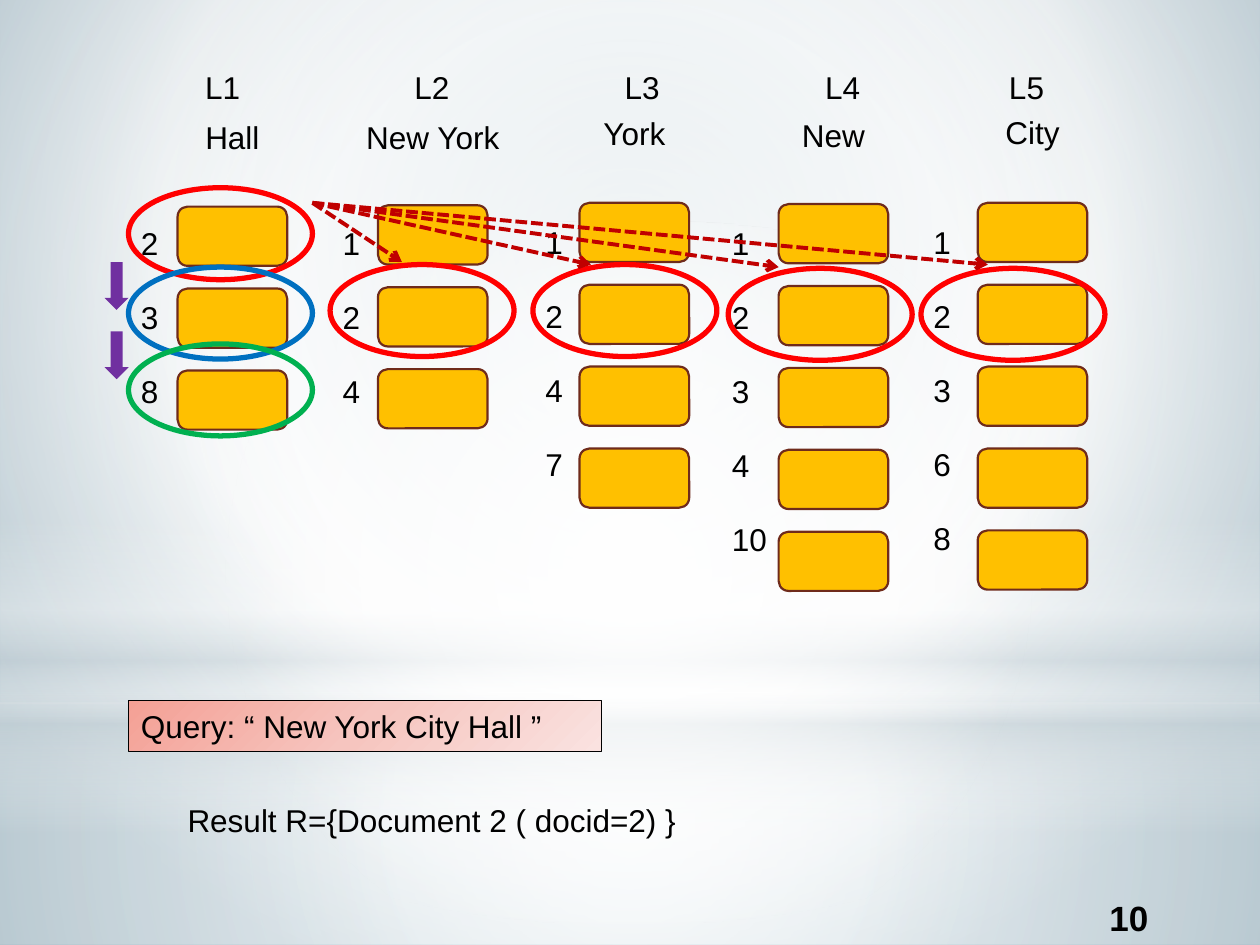
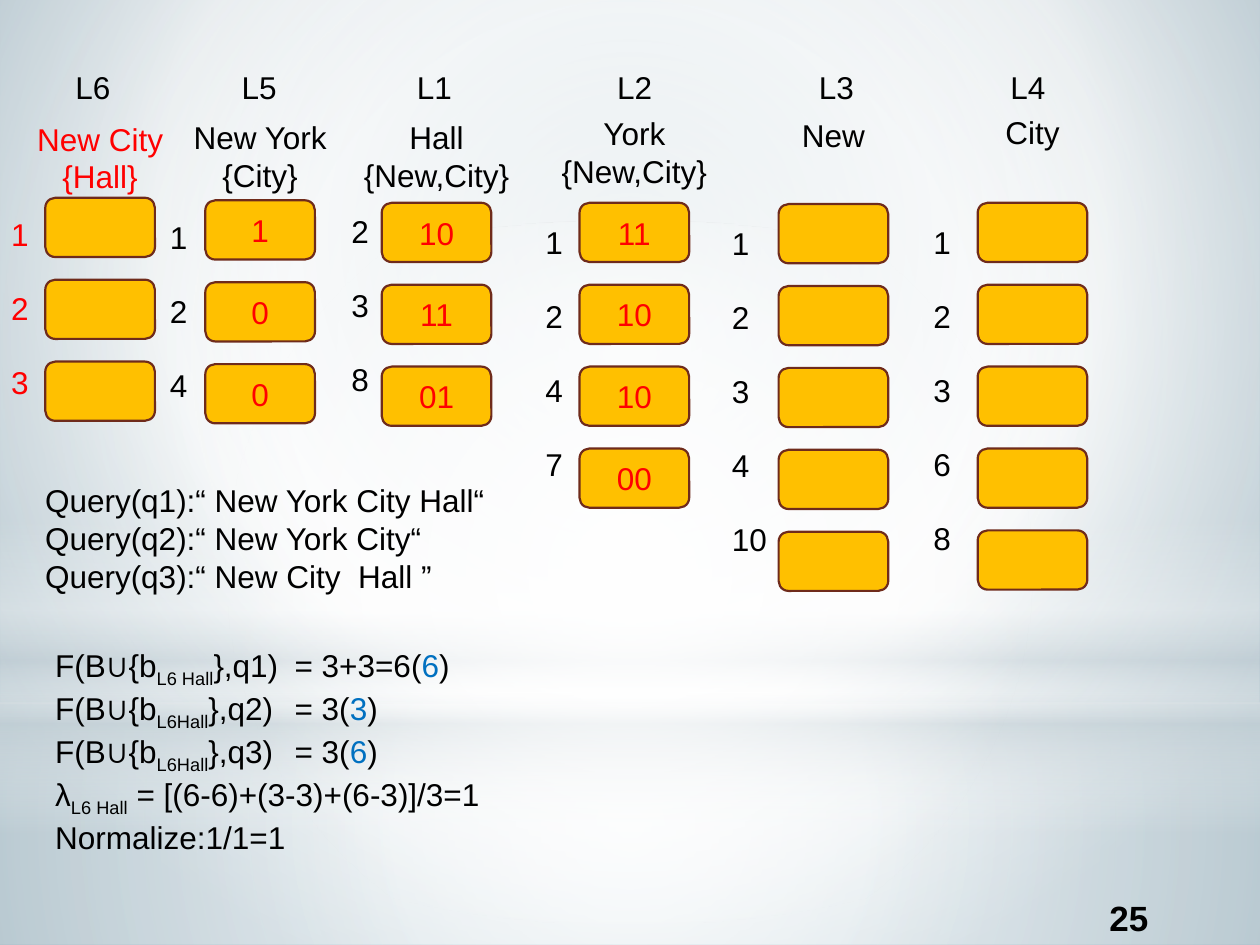
from collections import namedtuple
from lxml import etree
from pptx import Presentation, util as u
from pptx.dml.color import RGBColor
from pptx.enum import dml, shapes, text as t
from pptx.oxml.ns import qn

COLORS = {
    "black": "000000", "white": "FFFFFF", "red": "FF0000", "blue": "0070C0",
    "green": "00B050", "purple": "7030A0", "amber": "FFC000", "brown": "6F2B1B",
    "dark red": "C00000", "mist": "C5D1D7", "sky": "B8CAD3", "steel": "8FAEBD",
    "coral": "F4A095", "rose": "F6C5BF", "blush": "FAE2E0",
}
FONT = "Arial"
KINDS = shapes.MSO_SHAPE

presentation = Presentation()
presentation.slide_width, presentation.slide_height = u.Inches(10), u.Inches(7.5)
# The slide is a grid of 100 columns by 75 rows of square cells
CELL = presentation.slide_width // 100


def draw(slide, cells, text=(), kind=None, fill=None, line=None, weight=1.25,
         color="black", size=18, bold=False, align="LEFT", anchor="TOP",
         gap=0, tab=None):
    """Draw a shape, or a text box if kind is None. Each item of text is a
    paragraph: a string, or a list of (words, style) runs."""
    place = [round(cell * CELL) for cell in cells]
    if kind is None:
        shape = slide.shapes.add_textbox(*place)
    else:
        shape = slide.shapes.add_shape(kind, *place)
        shape.shadow.inherit = False
        if fill:
            shape.fill.solid()
            shape.fill.fore_color.rgb = RGBColor.from_string(COLORS[fill])
        else:
            shape.fill.background()
        if line:
            shape.line.color.rgb = RGBColor.from_string(COLORS[line])
            shape.line.width = u.Pt(weight)
        else:
            shape.line.fill.background()
    frame = shape.text_frame
    frame.word_wrap = True
    frame.vertical_anchor = getattr(t.MSO_ANCHOR, anchor)
    for index, words in enumerate(text):
        paragraph = frame.add_paragraph() if index else frame.paragraphs[0]
        paragraph.alignment = getattr(t.PP_ALIGN, align)
        paragraph.space_before = u.Pt(gap if index else 0)
        if tab:
            stops = etree.SubElement(paragraph._p.get_or_add_pPr(), qn("a:tabLst"))
            etree.SubElement(stops, qn("a:tab"), pos=str(round(tab * CELL)), algn="l")
        for part, style in [(words, "")] if isinstance(words, str) else words:
            run = paragraph.add_run()
            run.text = part
            run.font.name, run.font.size, run.font.bold = FONT, u.Pt(size), bold
            ink = style if style in COLORS else color
            run.font.color.rgb = RGBColor.from_string(COLORS[ink])
            if style == "subscript":
                run._r.get_or_add_rPr().set("baseline", "-25000")
    return shape


def gradient(owner, fill, stops, focus=None, angle=0):
    """Give a fill its (position, color, opacity) stops, around a focus
    rectangle or along an angle."""
    fill.gradient()
    node = next(owner.element.iter(qn("a:gradFill")))
    for child in list(node):
        node.remove(child)
    stop_list = etree.SubElement(node, qn("a:gsLst"))
    for position, color, opacity in stops:
        stop = etree.SubElement(stop_list, qn("a:gs"), pos=str(position * 1000))
        paint = etree.SubElement(stop, qn("a:srgbClr"), val=COLORS[color])
        etree.SubElement(paint, qn("a:alpha"), val=str(opacity * 1000))
    if focus:
        path = etree.SubElement(node, qn("a:path"), path="circle")
        sides = {side: str(share * 1000) for side, share in zip("ltrb", focus)}
        etree.SubElement(path, qn("a:fillToRect"), **sides)
    else:
        etree.SubElement(node, qn("a:lin"), ang=str(angle * 60000), scaled="0")


# Shared backdrop
CENTER = (50, 50, 50, 50)
BACKGROUND = [(0, "sky", 100), (60, "white", 100), (100, "steel", 100)]
BANDS = [
    (KINDS.RECTANGLE, (0, 55.8, 100, 19.2), CENTER,
     [(0, "white", 91), (37, "white", 76), (100, "mist", 79)]),
    (KINDS.RECTANGLE, (0, 0, 100, 55.8), CENTER,
     [(0, "white", 89), (48, "white", 62), (100, "mist", 79)]),
    (KINDS.RECTANGLE, (0, 41.2, 100, 25), None,
     [(0, "white", 0), (29, "white", 30), (45, "mist", 40), (55, "white", 26),
      (65, "mist", 60), (100, "white", 0)]),
    (KINDS.OVAL, (0, 17.5, 100, 55.8), CENTER,
     [(0, "white", 100), (56, "white", 0)]),
]

# Posting lists: a heading, document numbers and one box per document
BOX_WIDTH, BOX_HEIGHT, BOX_PITCH = 8.7, 4.7, 6.5
NAME_WIDTH = 15
Posting = namedtuple(
    "Posting", "label label_left name name_top box_left box_top "
    "numbers number_left number_top values color", defaults=((), "black"))
york = Posting("L3", 48.6, ["York"], 8.6, 46, 16.1, "1 2 4 7", 42.3, 17.2)
new = Posting("L4", 64.5, ["New"], 8.7, 61.8, 16.2, "1 2 3 4 10", 57.1, 17.3)
city = Posting("L5", 79.1, ["City"], 8.5, 77.6, 16.1, "1 2 3 6 8", 73.1, 17.2)
SLIDES = [
    ("10", [
        Posting("L1", 15.3, ["Hall"], 8.9, 14.1, 16.4, "2 3 8", 10.2, 17.3),
        Posting("L2", 31.9, ["New York"], 8.9, 30, 16.3, "1 2 4", 26.2, 17.3),
        york, new, city]),
    ("25", [
        Posting("L6", 5, ["New City", "{Hall}"], 9, 3.6, 15.7, "1 2 3", -0.1, 16.6,
                color="red"),
        Posting("L5", 18.2, ["New York", "{City}"], 8.9, 16.3, 15.9, "1 2 4",
                12.5, 16.8, ["1", "0", "0"]),
        Posting("L1", 32.1, ["Hall", "{New,City}"], 8.9, 30.3, 16.1, "2 3 8",
                26.9, 16.3, ["10", "11", "01"]),
        york._replace(label="L2", label_left=48, name=["York", "{New,City}"],
                      values=["11", "10", "10", "00"]),
        new._replace(label="L3", label_left=64),
        city._replace(label="L4", label_left=79.2)]),
]

for page, postings in SLIDES:
    slide = presentation.slides.add_slide(presentation.slide_layouts[6])
    gradient(slide, slide.background.fill, BACKGROUND, focus=(20, 10, 20, 60))
    for kind, cells, focus, stops in BANDS:
        band = draw(slide, cells, kind=kind)
        gradient(band, band.fill, stops, focus, angle=90)
    draw(slide, (79.6, 70.8, 20, 4), [page], size=20, bold=True,
         align="CENTER", anchor="MIDDLE")

    for posting in postings:
        numbers = posting.numbers.split()
        draw(slide, (posting.label_left, 4.9, 6, 4), [posting.label])
        name_left = posting.box_left + (BOX_WIDTH - NAME_WIDTH) / 2
        draw(slide, (name_left, posting.name_top, NAME_WIDTH, 4 * len(posting.name)),
             posting.name, color=posting.color, align="CENTER")
        for row in range(len(numbers)):
            box_top = posting.box_top + row * BOX_PITCH
            draw(slide, (posting.box_left, box_top, BOX_WIDTH, BOX_HEIGHT),
                 posting.values[row:row + 1], kind=KINDS.ROUNDED_RECTANGLE,
                 fill="amber", line="brown", color="red", align="CENTER",
                 anchor="MIDDLE")
        draw(slide, (posting.number_left, posting.number_top, 5.5, 6 * len(numbers) - 2),
             numbers, color=posting.color, gap=20.7)

search, scores = presentation.slides

# Search slide: rings around the compared documents
for left, top, color in [
        (26.2, 21, "red"), (10.2, 14.9, "red"), (42.3, 21, "red"),
        (57.8, 21.3, "red"), (73.1, 21.3, "red"),
        (10.2, 21.2, "blue"), (10.2, 27.3, "green")]:
    draw(search, (left, top, 14.6, 7.3), kind=KINDS.OVAL, line=color, weight=3)

# Search slide: dashed arrows from the first list to the others
for end in [(31.9, 20.8), (46.9, 21), (61.8, 21.2), (78.4, 21)]:
    points = [round(cell * CELL) for cell in (24.8, 16.1, *end)]
    arrow = search.shapes.add_connector(shapes.MSO_CONNECTOR.STRAIGHT, *points)
    arrow.line.color.rgb = RGBColor.from_string(COLORS["dark red"])
    arrow.line.width = u.Pt(2.25)
    arrow.line.dash_style = dml.MSO_LINE.SQUARE_DOT
    properties = arrow.element.spPr
    etree.SubElement(properties.find(qn("a:ln")), qn("a:tailEnd"), type="arrow")
    etree.SubElement(properties, qn("a:effectLst"))

# Search slide: steps down the first list, query and result
for top in (20.8, 26.3):
    draw(search, (8.3, top, 1.9, 3.8), kind=KINDS.DOWN_ARROW, fill="purple")
query = draw(search, (10.2, 55.6, 37.5, 4), ["Query: “ New York City Hall ”"],
             kind=KINDS.RECTANGLE, line="black", weight=0.25)
gradient(query, query.fill,
         [(0, "coral", 100), (50, "rose", 100), (100, "blush", 100)], angle=45)
draw(search, (13.9, 63.1, 45, 4), ["Result R={Document 2 ( docid=2) }"])

# Scores slide: queries and their benefit
draw(scores, (2.6, 37.7, 40.6, 10.1), [
    "Query(q1):“ New York City Hall“",
    "Query(q2):“ New York City“",
    "Query(q3):“ New City  Hall ”"])
formulas = [
    [("F(B∪{b", ""), (item, "subscript"), (f"}},{name})\t= {total}(", ""),
     (best, "blue"), (")", "")]
    for item, name, total, best in [
        ("L6 Hall", "q1", "3+3=6", "6"), ("L6Hall", "q2", "3", "3"),
        ("L6Hall", "q3", "3", "6")]]
draw(scores, (3.4, 50.8, 96.3, 16.2), formulas + [
    [("λ", ""), ("L6 Hall", "subscript"), (" = [(6-6)+(3-3)+(6-3)]/3=1", "")],
    "Normalize:1/1=1"], tab=19)

presentation.save("out.pptx")
